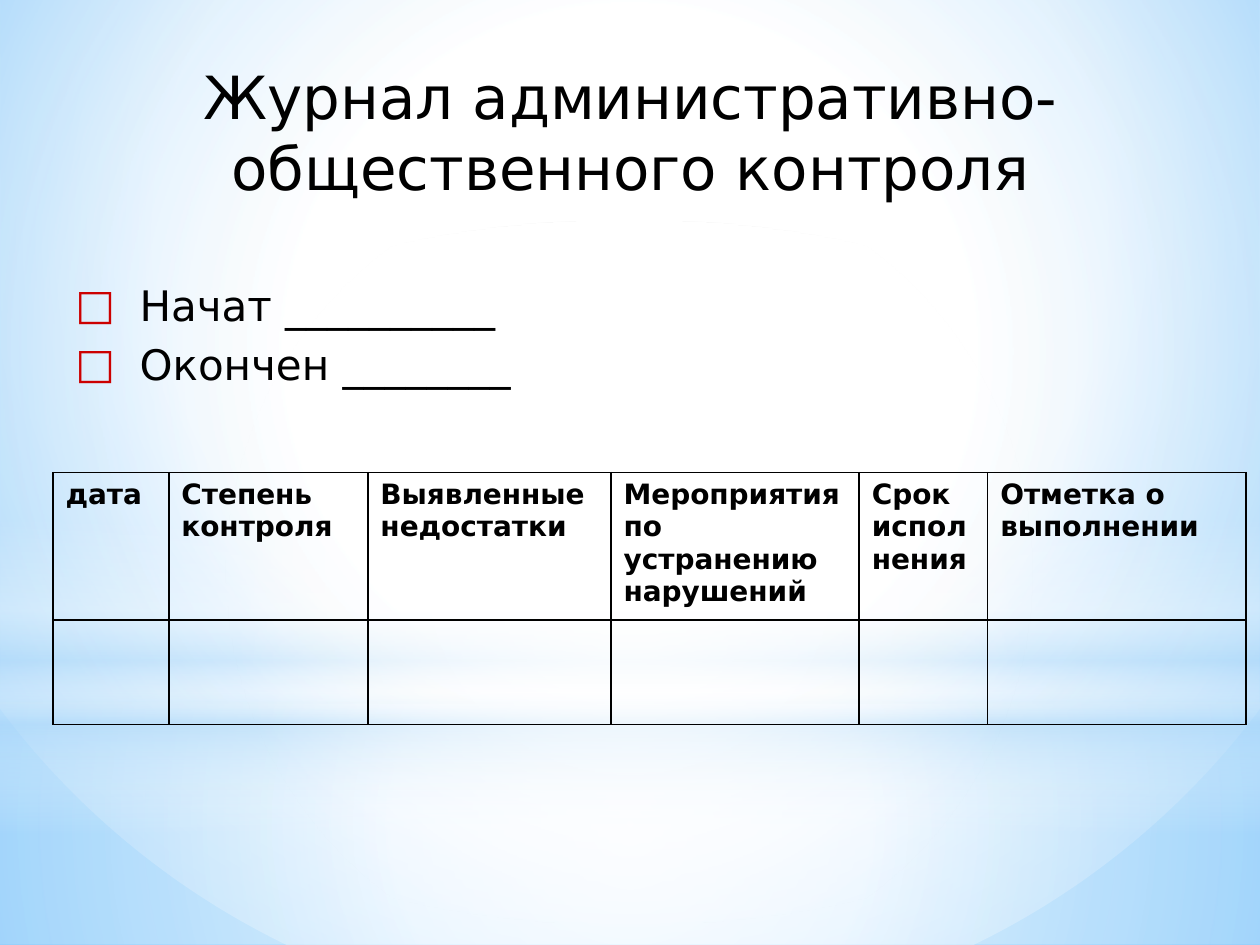
from lxml import etree
from pptx import Presentation
from pptx.dml.color import RGBColor
from pptx.enum.shapes import MSO_SHAPE as Shape
from pptx.enum.text import MSO_ANCHOR as Anchor, PP_ALIGN as Align
from pptx.oxml.ns import qn
from pptx.util import Inches, Pt

COLORS = {"text": "000000", "bullet": "CC0000", "border": "000000", "white": "FFFFFF",
          "haze": "B4DCFA", "sky": "9ED5FF", "deep_sky": "5BB9FF"}
FONT = "DejaVu Sans"
CENTER = (50, 50, 50, 50)


def add_element(parent, tag, **attributes):
    return etree.SubElement(parent, qn(tag), {key: str(value) for key, value in attributes.items()})


def add_color(parent, name, opacity=100):
    color = add_element(parent, "a:srgbClr", val=COLORS[name])
    if opacity < 100:
        add_element(color, "a:alpha", val=opacity * 1000)


def set_gradient(fill, owner, stops, center=None, angle=0):
    """Stops are (position, colour name, opacity); center makes the gradient circular."""
    fill.gradient()
    gradient = owner.find(".//" + qn("a:gradFill"))
    for child in list(gradient):
        gradient.remove(child)
    stop_list = add_element(gradient, "a:gsLst")
    for position, name, opacity in stops:
        add_color(add_element(stop_list, "a:gs", pos=position * 1000), name, opacity)
    if center:
        circle = add_element(gradient, "a:path", path="circle")
        add_element(circle, "a:fillToRect",
                    **{side: value * 1000 for side, value in zip("ltrb", center)})
    else:
        add_element(gradient, "a:lin", ang=angle * 60000, scaled=0)


def write_text(paragraph, text, size, bold=False, align=None, before=0, bullet=None, indent=0):
    paragraph.alignment = align
    properties = paragraph._p.get_or_add_pPr()
    if before:
        spacing = add_element(properties, "a:spcBef")
        add_element(spacing, "a:spcPct", val=before * 1000)
    if bullet:
        properties.set("marL", str(Inches(indent)))
        properties.set("indent", str(-Inches(indent)))
        add_color(add_element(properties, "a:buClr"), "bullet")
        add_element(properties, "a:buFont", typeface=FONT)
        add_element(properties, "a:buChar", char=bullet)
    run = paragraph.add_run()
    run.text = text
    run.font.name = FONT
    run.font.size = Pt(size)
    run.font.bold = bold
    run.font.color.rgb = RGBColor.from_string(COLORS["text"])


def add_text_frame(slide, box, anchor=Anchor.TOP):
    frame = slide.shapes.add_textbox(*map(Inches, box)).text_frame
    frame.word_wrap = True
    frame.vertical_anchor = anchor
    return frame


def add_backdrop(slide, box):
    left, top, width, height = box
    set_gradient(slide.background.fill, slide._element,
                 [(60, "white", 100), (100, "sky", 100), (100, "deep_sky", 100)],
                 center=(20, 10, 20, 60))
    horizon = 5.58
    layers = [
        # Ground, sky, horizon band, central glow
        (Shape.RECTANGLE, horizon, height - horizon, CENTER,
         [(0, "white", 91), (37, "white", 76), (100, "haze", 79)]),
        (Shape.RECTANGLE, 0, horizon, CENTER,
         [(0, "white", 89), (48, "white", 62), (100, "haze", 79)]),
        (Shape.RECTANGLE, 4.12, 2.5, None,
         [(0, "white", 0), (29, "white", 30), (45, "haze", 40),
          (55, "white", 26), (65, "haze", 60), (100, "white", 0)]),
        (Shape.OVAL, 1.75, 5.58, CENTER, [(0, "white", 100), (56, "white", 0)]),
    ]
    for kind, offset, layer_height, center, stops in layers:
        shape = slide.shapes.add_shape(kind, Inches(left), Inches(top + offset),
                                       Inches(width), Inches(layer_height))
        shape.shadow.inherit = False
        shape.line.fill.background()
        set_gradient(shape.fill, shape._element, stops, center, angle=90)


def add_title(slide, box):
    frame = add_text_frame(slide, box, Anchor.BOTTOM)
    write_text(frame.paragraphs[0], "Журнал административно-общественного контроля",
               size=34, align=Align.CENTER)


def add_dates(slide, box):
    frame = add_text_frame(slide, box)
    for index, line in enumerate(["Начат __________", "Окончен ________"]):
        paragraph = frame.add_paragraph() if index else frame.paragraphs[0]
        write_text(paragraph, line, size=24, before=20, bullet="□", indent=0.51)


def style_cell(cell):
    properties = cell._tc.get_or_add_tcPr()
    for side in ("a:lnL", "a:lnR", "a:lnT", "a:lnB"):
        line = add_element(properties, side, w=Pt(1))
        add_color(add_element(line, "a:solidFill"), "border")
    cell.fill.background()


def add_journal(slide, box):
    columns = [("дата", 0.92), ("Степень контроля", 1.58), ("Выявленные недостатки", 1.93),
               ("Мероприятия по устранению нарушений", 1.97), ("Срок исполнения", 1.02),
               ("Отметка о выполнении", 2.05)]
    table = slide.shapes.add_table(2, len(columns), *map(Inches, box)).table
    table.first_row = table.horz_banding = False
    for row, height in zip(table.rows, (1.17, 0.83)):
        row.height = Inches(height)
    for index, (heading, width) in enumerate(columns):
        table.columns[index].width = Inches(width)
        paragraph = table.cell(0, index).text_frame.paragraphs[0]
        write_text(paragraph, heading, size=16, bold=True, before=20)
    for cell in table.iter_cells():
        style_cell(cell)


def main():
    presentation = Presentation()
    presentation.slide_width = Inches(10)
    presentation.slide_height = Inches(7.5)
    slide = presentation.slides.add_slide(presentation.slide_layouts[6])
    add_backdrop(slide, (0, 0, 10, 7.5))
    add_title(slide, (0.63, 0.33, 8.75, 1.33))
    add_dates(slide, (0.5, 2.17, 9.04, 4.67))
    add_journal(slide, (0.42, 3.75, 9.47, 2))
    presentation.save("out.pptx")


if __name__ == "__main__":
    main()
